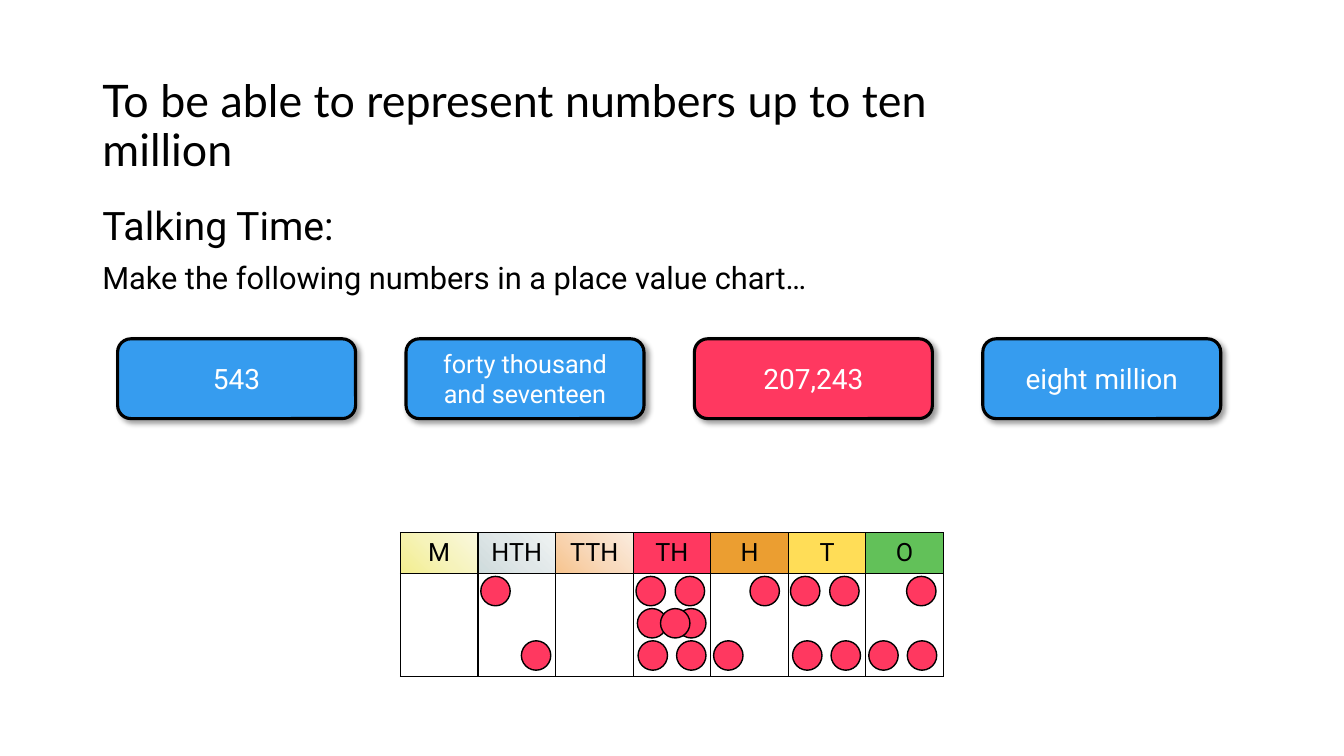
import pptx
import pptx.dml.color
import pptx.enum.shapes
import pptx.enum.text
import pptx.oxml
import pptx.oxml.ns
import pptx.util
from dataclasses import dataclass

Pt = pptx.util.Pt
SHAPE = pptx.enum.shapes.MSO_SHAPE
ALIGN = pptx.enum.text.PP_ALIGN
ANCHOR = pptx.enum.text.MSO_ANCHOR
NS = pptx.oxml.ns.nsdecls("a")


@dataclass(frozen=True)
class Theme:
    black: str = "000000"
    white: str = "FFFFFF"
    blue: str = "369CEF"
    red: str = "FF3860"
    orange: str = "EB9E31"
    yellow: str = "FFDD57"
    green: str = "62C159"
    pale_yellow: tuple = ("F3EE8E", "F6F3BB", "FAF8DE")
    pale_grey: tuple = ("CFDBDC", "E0E7E8", "EFF3F3")
    pale_orange: tuple = ("F7C48E", "F8D9BB", "FBECDE")
    heading_font: str = "Lato"
    body_font: str = "Roboto"
    title: int = 32
    subtitle: int = 28
    body: int = 22
    card: int = 20
    small: int = 18


T = Theme()

CARDS = [
    ("543", T.blue, T.card),
    ("forty thousand and seventeen", T.blue, T.small),
    ("207,243", T.red, T.card),
    ("eight million", T.blue, T.card),
]

PLACES = [
    ("M", T.pale_yellow, []),
    ("HTH", T.pale_grey, [(2, 0), (31, 2)]),
    ("TTH", T.pale_orange, []),
    ("TH", T.red, [(30, 0), (31, 1), (3, 1), (3.5, 2), (19.5, 1), (2, 0), (31, 2)]),
    ("H", T.orange, [(28, 0), (2, 2)]),
    ("T", T.yellow, [(29.5, 0), (3, 2), (1.5, 0), (30.5, 2)]),
    ("O", T.green, [(29, 0), (2, 2), (29.5, 2)]),
]


def rgb(value):
    return pptx.dml.color.RGBColor.from_string(value)


def write(p, text, size, font=T.body_font, color=T.black,
          align=ALIGN.LEFT, spacing=1.0, before=0):
    p.alignment = align
    p.line_spacing = spacing
    p.space_before = Pt(before)
    r = p.add_run()
    r.text = text
    r.font.name = font
    r.font.size = Pt(size)
    r.font.color.rgb = rgb(color)


def add_outlined(s, kind, x, y, w, h, fill, line):
    sp = s.shapes.add_shape(kind, Pt(x), Pt(y), Pt(w), Pt(h))
    sp.shadow.inherit = False
    sp.fill.solid()
    sp.fill.fore_color.rgb = rgb(fill)
    sp.line.color.rgb = rgb(T.black)
    sp.line.width = Pt(line)
    return sp


def add_shadow(sp):
    effects = sp._element.spPr.find(pptx.oxml.ns.qn("a:effectLst"))
    effects.append(pptx.oxml.parse_xml(
        f'<a:outerShdw {NS} blurRad="{Pt(4)}" dist="{Pt(3)}" dir="2700000" '
        f'algn="tl" rotWithShape="0"><a:srgbClr val="{T.black}">'
        '<a:alpha val="40000"/></a:srgbClr></a:outerShdw>'))


def style_cell(cell, fill):
    tcPr = cell._tc.get_or_add_tcPr()
    for side in "LRTB":
        tcPr.append(pptx.oxml.parse_xml(
            f'<a:ln{side} {NS} w="{Pt(1)}"><a:solidFill>'
            f'<a:srgbClr val="{T.black}"/></a:solidFill></a:ln{side}>'))
    if isinstance(fill, str):
        cell.fill.solid()
        cell.fill.fore_color.rgb = rgb(fill)
        return
    stops = "".join(
        f'<a:gs pos="{i * 50000}"><a:srgbClr val="{c}"/></a:gs>'
        for i, c in enumerate(fill))
    tcPr.append(pptx.oxml.parse_xml(
        f'<a:gradFill {NS}><a:gsLst>{stops}</a:gsLst><a:path path="circle">'
        '<a:fillToRect t="100000" r="100000"/></a:path></a:gradFill>'))


def add_title(s, x, y, w, h):
    sp = s.shapes.title
    sp.left, sp.top, sp.width, sp.height = Pt(x), Pt(y), Pt(w), Pt(h)
    tf = sp.text_frame
    tf.word_wrap = True
    tf.auto_size = pptx.enum.text.MSO_AUTO_SIZE.NONE
    tf.vertical_anchor = ANCHOR.MIDDLE
    write(tf.paragraphs[0], "To be able to represent numbers up to ten million",
          T.title, font=T.heading_font, spacing=0.9)


def add_task(s, x, y, w, h):
    tf = s.shapes.add_textbox(Pt(x), Pt(y), Pt(w), Pt(h)).text_frame
    tf.word_wrap = True
    write(tf.paragraphs[0], "Talking Time:", T.subtitle, spacing=0.9)
    write(tf.add_paragraph(), "Make the following numbers in a place value chart…",
          T.body, spacing=0.9, before=10)


def add_cards(s, x, y, w, h, card_w=170):
    pitch = (w - card_w) / (len(CARDS) - 1)
    for i, (text, fill, size) in enumerate(CARDS):
        sp = add_outlined(s, SHAPE.ROUNDED_RECTANGLE, x + i * pitch, y,
                          card_w, h, fill, 2.25)
        add_shadow(sp)
        tf = sp.text_frame
        tf.word_wrap = True
        tf.vertical_anchor = ANCHOR.MIDDLE
        write(tf.paragraphs[0], text, size, color=T.white, align=ALIGN.CENTER)


def add_place_value_chart(s, x, y, w, h, header_h=29.2, counter=21, pitch=23):
    col_w = w / len(PLACES)
    table = s.shapes.add_table(2, len(PLACES), Pt(x), Pt(y), Pt(w), Pt(h)).table
    table.first_row = table.horz_banding = False
    table.rows[0].height = Pt(header_h)
    table.rows[1].height = Pt(h - header_h)
    for i, (place, fill, counters) in enumerate(PLACES):
        table.columns[i].width = Pt(col_w)
        header = table.cell(0, i)
        style_cell(header, fill)
        write(header.text_frame.paragraphs[0], place, T.small, align=ALIGN.CENTER)
        style_cell(table.cell(1, i), T.white)
        for dx, row in counters:
            add_outlined(s, SHAPE.OVAL, x + i * col_w + dx,
                         y + header_h + 2 + row * pitch, counter, counter, T.red, 1)


def main():
    prs = pptx.Presentation()
    prs.slide_width, prs.slide_height = Pt(960), Pt(540)
    s = prs.slides.add_slide(prs.slide_layouts.get_by_name("Title Only"))
    add_task(s, 66, 144, 828, 343)
    add_title(s, 66, 39, 691, 104)
    add_cards(s, 84, 242, 788, 57)
    add_place_value_chart(s, 286, 380.5, 388, 102.5)
    prs.save("out.pptx")


if __name__ == "__main__":
    main()
